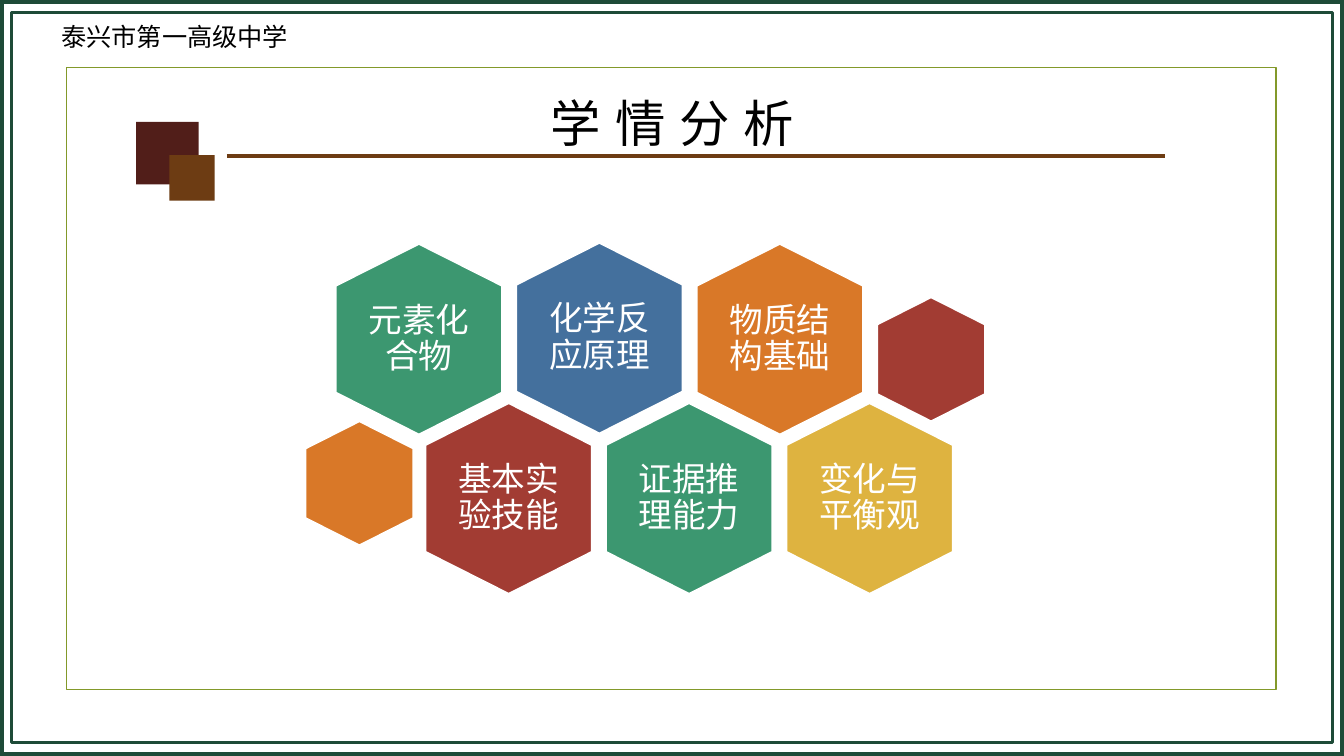
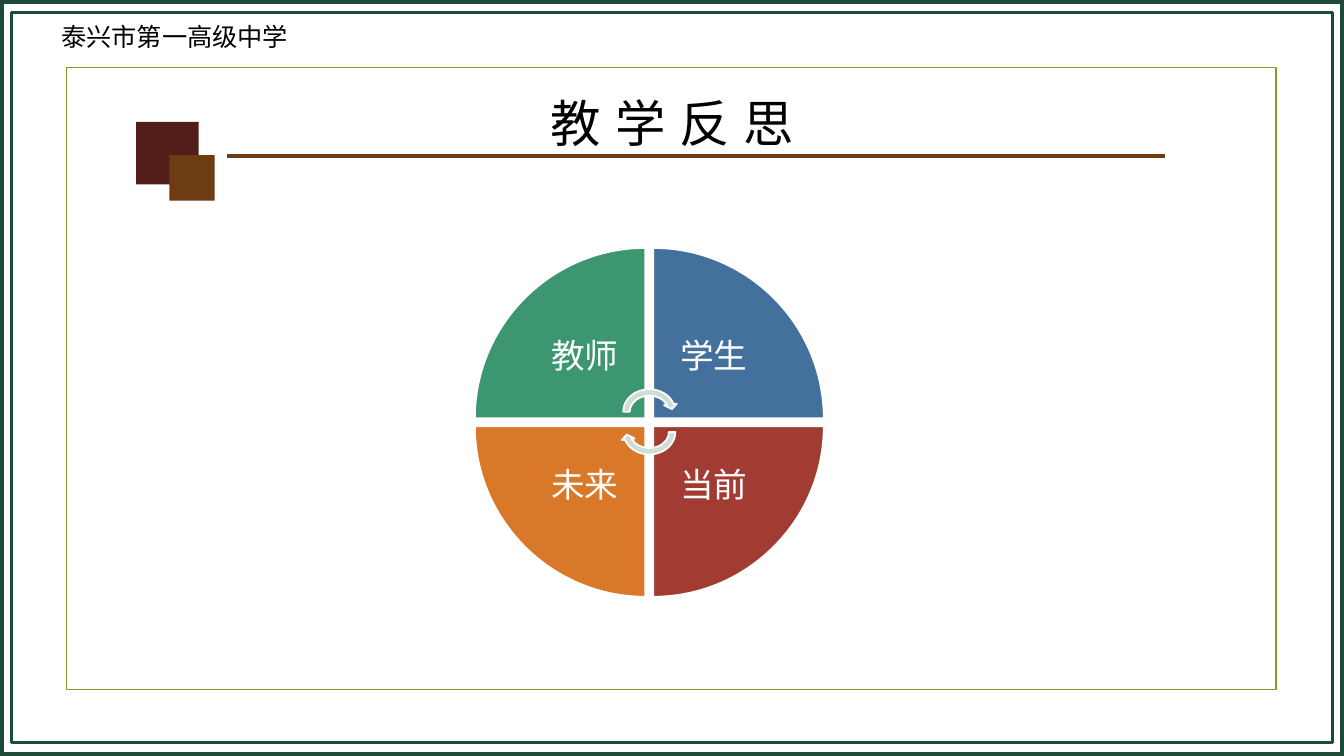
"""Build two framed lesson slides: a honeycomb of topics and a four-part wheel."""
from lxml import etree
from pptx import Presentation
from pptx import util as u
from pptx.dml.color import RGBColor
from pptx.enum import shapes, text
from pptx.oxml import ns

PX = 9144
FONT = "Times New Roman"
WHITE = RGBColor(0xFF, 0xFF, 0xFF)
BLACK = RGBColor(0x00, 0x00, 0x00)
OLIVE = RGBColor(0x83, 0x99, 0x2A)
FOREST = RGBColor(0x1E, 0x4B, 0x38)
MAROON = RGBColor(0x51, 0x1E, 0x19)
BROWN = RGBColor(0x6D, 0x3C, 0x13)
GREEN = RGBColor(0x3C, 0x97, 0x70)
BLUE = RGBColor(0x44, 0x70, 0x9D)
ORANGE = RGBColor(0xD9, 0x78, 0x28)
RED = RGBColor(0xA2, 0x3C, 0x33)
YELLOW = RGBColor(0xDE, 0xB3, 0x40)
MINT = RGBColor(0xCE, 0xDD, 0xD5)

WIDTH, HEIGHT = 1333, 750
SCHOOL = "泰兴市第一高级中学"
FRAMES = [
    ((66, 67, 1200, 617), OLIVE, 1.25),
    ((0, 0, WIDTH, HEIGHT), FOREST, 6),
    ((11, 12, 1311, 725), FOREST, 2.25),
]
SQUARES = [((135, 121, 62, 62), MAROON), ((168, 154, 45, 45), BROWN)]
RULE = (225, 155, 1155, 155)

TOPICS_TITLE = "学情分析"
TOPIC_PITCH = 179
TOPIC_SIZE = (165, 189)
TOPIC_ROWS = [
    (333, [("元素化合物", GREEN, 242), ("化学反应原理", BLUE, 241), ("物质结构基础", ORANGE, 242)]),
    (422, [("基本实验技能", RED, 400), ("证据推理能力", GREEN, 400), ("变化与平衡观", YELLOW, 400)]),
]
ACCENTS = [(303, 418, ORANGE), (870, 295, RED)]
ACCENT_SIZE = (107, 123)
SHOULDER = 0.22

WHEEL_TITLE = "教学反思"
QUADRANTS = [
    ("教师", GREEN, -1, -1),
    ("学生", BLUE, 1, -1),
    ("当前", RED, 1, 1),
    ("未来", ORANGE, -1, 1),
]
WHEEL_CENTER = (644, 419)
WHEEL_GAP, WHEEL_RADIUS, ARC_HANDLE = 4, 169, 0.55
OUTER_INSET, INNER_INSET = 68, 19
ARROWS = [(383, 0), (403, 180)]
ARROW_ADJUSTMENTS = [0.125, 7.575, 204.577, 108, 0.125]


def px(*lengths):
    return [u.Emu(round(length * PX)) for length in lengths]


def paint(shape, fill=None, line=None, weight=1.25):
    shape.shadow.inherit = False
    if fill is None:
        shape.fill.background()
    else:
        shape.fill.solid()
        shape.fill.fore_color.rgb = fill
    if line is None:
        shape.line.fill.background()
    else:
        shape.line.color.rgb = line
        shape.line.width = u.Pt(weight)


def write(shape, words, size, color, align, anchor, insets=(10, 5, 10, 5)):
    frame = shape.text_frame
    frame.word_wrap = True
    frame.auto_size = text.MSO_AUTO_SIZE.NONE
    frame.vertical_anchor = anchor
    frame.margin_left, frame.margin_top, frame.margin_right, frame.margin_bottom = px(*insets)
    paragraph = frame.paragraphs[0]
    paragraph.alignment = align
    run = paragraph.add_run()
    run.text = words
    run.font.name = FONT
    run.font.size = u.Pt(size)
    run.font.color.rgb = color
    return paragraph, run


def add_outline(slide, points, fill, words=None, insets=None):
    start, *rest = [px(*point) for point in points]
    builder = slide.shapes.build_freeform(*start)
    builder.add_line_segments(rest, close=True)
    shape = builder.convert_to_shape()
    paint(shape, fill, WHITE)
    if words:
        paragraph, _ = write(shape, words, 24, WHITE, text.PP_ALIGN.CENTER,
                             text.MSO_ANCHOR.MIDDLE, insets)
        paragraph.line_spacing = 0.9
    return shape


def curve_first_side(shape):
    first, second, third = list(shape._element.iter(ns.qn("a:lnTo")))[:3]
    curve = etree.Element(ns.qn("a:cubicBezTo"))
    first.addprevious(curve)
    for segment in (first, second, third):
        curve.append(segment[0])
        segment.getparent().remove(segment)


def add_shared_parts(slide):
    for box, color, weight in FRAMES:
        frame = slide.shapes.add_shape(shapes.MSO_SHAPE.RECTANGLE, *px(*box))
        paint(frame, line=color, weight=weight)
    school = slide.shapes.add_textbox(*px(51, 16, 287, 40))
    write(school, SCHOOL, 18, BLACK, text.PP_ALIGN.LEFT, text.MSO_ANCHOR.TOP)
    for box, color in SQUARES:
        square = slide.shapes.add_shape(shapes.MSO_SHAPE.RECTANGLE, *px(*box))
        paint(square, color)
    rule = slide.shapes.add_connector(shapes.MSO_CONNECTOR.STRAIGHT, *px(*RULE))
    rule.line.color.rgb = BROWN
    rule.line.width = u.Pt(3)
    etree.SubElement(rule._element.spPr, ns.qn("a:effectLst"))
    layout_tree = slide.slide_layout.shapes._spTree
    for shape in list(slide.shapes):
        if not shape.is_placeholder:
            layout_tree.append(shape._element)


def add_titled_slide(presentation, title_words):
    slide = presentation.slides.add_slide(presentation.slide_layouts[5])
    title = slide.shapes.title
    title.left, title.top, title.width, title.height = px(257, 86, 820, 57)
    _, run = write(title, title_words, 36, BLACK, text.PP_ALIGN.CENTER, text.MSO_ANCHOR.TOP)
    run.font._element.set("spc", "1000")
    return slide


def add_hexagon(slide, left, top, size, fill, words=None):
    width, height = size
    right, middle, bottom = left + width, left + width / 2, top + height
    upper, lower = top + SHOULDER * height, bottom - SHOULDER * height
    points = [(middle, top), (right, upper), (right, lower),
              (middle, bottom), (left, lower), (left, upper)]
    add_outline(slide, points, fill, words, (22, 25, 22, 25))


def add_quadrant(slide, words, fill, across, down):
    corner_x = WHEEL_CENTER[0] + across * WHEEL_GAP
    corner_y = WHEEL_CENTER[1] + down * WHEEL_GAP
    steps = [(1, 0), (1, ARC_HANDLE), (ARC_HANDLE, 1), (0, 1), (0, 0)]
    points = [(corner_x + across * WHEEL_RADIUS * x, corner_y + down * WHEEL_RADIUS * y)
              for x, y in steps]
    insets = [OUTER_INSET if outer else INNER_INSET
              for outer in (across < 0, down < 0, across > 0, down > 0)]
    curve_first_side(add_outline(slide, points, fill, words, insets))


def build_topics(presentation):
    slide = add_titled_slide(presentation, TOPICS_TITLE)
    add_shared_parts(slide)
    for left, topics in TOPIC_ROWS:
        for column, (words, fill, top) in enumerate(topics):
            add_hexagon(slide, left + column * TOPIC_PITCH, top, TOPIC_SIZE, fill, words)
    for left, top, fill in ACCENTS:
        add_hexagon(slide, left, top, ACCENT_SIZE, fill)


def build_wheel(presentation):
    slide = add_titled_slide(presentation, WHEEL_TITLE)
    for quadrant in QUADRANTS:
        add_quadrant(slide, *quadrant)
    for top, rotation in ARROWS:
        arrow = slide.shapes.add_shape(shapes.MSO_SHAPE.CIRCULAR_ARROW, *px(615, top, 58, 51))
        for index, value in enumerate(ARROW_ADJUSTMENTS):
            arrow.adjustments[index] = value
        arrow.rotation = rotation
        paint(arrow, MINT, WHITE)


def main():
    presentation = Presentation()
    presentation.slide_width, presentation.slide_height = px(WIDTH, HEIGHT)
    build_topics(presentation)
    build_wheel(presentation)
    presentation.save("out.pptx")


if __name__ == "__main__":
    main()
